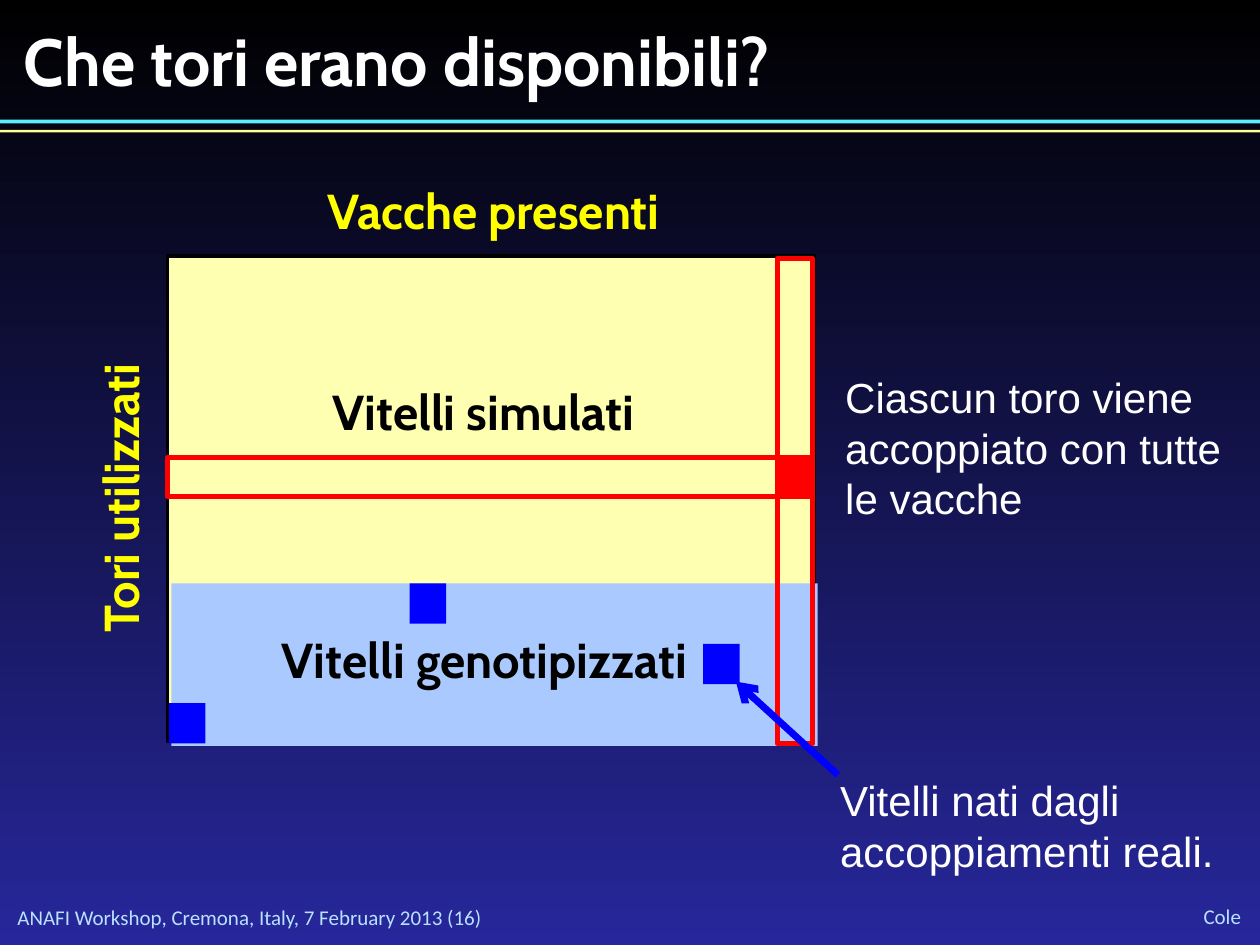
from typing import NamedTuple, Optional

from lxml.etree import SubElement
from pptx import Presentation
from pptx.dml.color import RGBColor
from pptx.enum.shapes import MSO_CONNECTOR as Connector, MSO_SHAPE as Preset
from pptx.enum.text import MSO_ANCHOR as Anchor, PP_ALIGN as Align
from pptx.oxml.ns import qn
from pptx.slide import Slide
from pptx.util import Pt

BLACK = RGBColor(0x00, 0x00, 0x00)
WHITE = RGBColor(0xFF, 0xFF, 0xFF)
NAVY = RGBColor(0x27, 0x27, 0x9B)
CYAN = RGBColor(0x5B, 0xEF, 0xFF)
CREAM = RGBColor(0xFF, 0xFF, 0x99)
SIMULATED = RGBColor(0xFF, 0xFF, 0xB2)
GENOTYPED = RGBColor(0xA9, 0xC9, 0xFF)
FOOTER = RGBColor(0xB8, 0xE2, 0xFF)
YELLOW = RGBColor(0xFF, 0xFF, 0x00)
RED = RGBColor(0xFF, 0x00, 0x00)
BLUE = RGBColor(0x00, 0x00, 0xFF)

HERD_W, HERD_H = 369.4, 277.2
LABEL_W, LABEL_H = 277.2, 41
MATING_W, MATING_H = 20.9, 23


class Block(NamedTuple):
    left: float
    top: float
    width: float
    height: float
    fill: Optional[RGBColor] = None
    line: Optional[RGBColor] = None
    weight: float = 0


class Style(NamedTuple):
    font: str
    size: float
    color: RGBColor
    bold: bool = False
    align: Align = Align.LEFT
    anchor: Anchor = Anchor.TOP
    padded: bool = True


class Label(NamedTuple):
    text: str
    left: float
    top: float
    width: float
    height: float
    style: Style
    rotation: float = 0


TITLE = Style("Cabin", 38, WHITE, bold=True, padded=False)
AXIS = Style("Cabin", 28, YELLOW, bold=True, align=Align.CENTER)
GROUP = AXIS._replace(color=BLACK)
NOTE = Style("Arial", 24, WHITE)
EVENT = Style("Calibri", 12, FOOTER, anchor=Anchor.MIDDLE, padded=False)
AUTHOR = EVENT._replace(align=Align.RIGHT)

BLOCKS = [
    Block(0, 68.4, 720, 2.2, CYAN),
    Block(0, 74.2, 720, 1.4, CREAM),
    Block(95.8, 146.2, HERD_W, HERD_H, SIMULATED, BLACK, 2),
    Block(97.9, 333.4, HERD_W, 92.9, GENOTYPED),
    Block(444.2, 147.6, 20.2, HERD_H, line=RED, weight=3),
    Block(95.8, 261.4, 367.9, 22.3, line=RED, weight=3),
    Block(444.2, 261.4, MATING_W, MATING_H, RED),
] + [
    Block(left, top, MATING_W, MATING_H, BLUE)
    for left, top in ((96.5, 401.8), (234, 333.4), (401.8, 367.9))
]

LABELS = [
    Label("Che tori erano disponibili?", 13.7, 11.5, 648, 46, TITLE),
    Label("Tori utilizzati", -69.8, 264.2, LABEL_W, LABEL_H, AXIS, 270),
    Label("Vacche presenti", 143.3, 99.4, LABEL_W, LABEL_H, AXIS),
    Label("Vitelli simulati", 137.5, 214.6, LABEL_W, LABEL_H, GROUP),
    Label("Vitelli genotipizzati", 138.2, 356.4, LABEL_W, LABEL_H, GROUP),
    Label("Ciascun toro viene accoppiato con tutte le vacche",
          475.9, 208.8, 230.4, 94.3, NOTE),
    Label("Vitelli nati dagli accoppiamenti reali.",
          473, 439.2, 230.4, 65.5, NOTE),
    Label("ANAFI Workshop, Cremona, Italy, 7 February 2013 (16)",
          10, 517, 376, 14.4, EVENT),
    Label("Cole", 627.8, 516.2, 81.4, 15.1, AUTHOR),
]


def paint_background(slide: Slide) -> None:
    fill = slide.background.fill
    fill.gradient()
    fill.gradient_angle = 270
    for stop, color, position in zip(fill.gradient_stops, (BLACK, NAVY), (0, 1)):
        stop.color.rgb = color
        stop.position = position


def draw_block(slide: Slide, block: Block) -> None:
    shape = slide.shapes.add_shape(Preset.RECTANGLE, *map(Pt, block[:4]))
    shape.shadow.inherit = False
    if block.fill is None:
        shape.fill.background()
    else:
        shape.fill.solid()
        shape.fill.fore_color.rgb = block.fill
    if block.line is None:
        shape.line.fill.background()
    else:
        shape.line.color.rgb = block.line
        shape.line.width = Pt(block.weight)


def draw_label(slide: Slide, label: Label) -> None:
    style = label.style
    box = slide.shapes.add_textbox(*map(Pt, label[1:5]))
    box.rotation = label.rotation
    frame = box.text_frame
    frame.text = label.text
    frame.word_wrap = True
    frame.vertical_anchor = style.anchor
    if not style.padded:
        frame.margin_left = frame.margin_right = 0
        frame.margin_top = frame.margin_bottom = 0
    paragraph = frame.paragraphs[0]
    paragraph.alignment = style.align
    font = paragraph.runs[0].font
    font.name, font.size, font.bold = style.font, Pt(style.size), style.bold
    font.color.rgb = style.color


def draw_arrow(slide: Slide, start: tuple[float, float],
               end: tuple[float, float], color: RGBColor, weight: float) -> None:
    arrow = slide.shapes.add_connector(
        Connector.STRAIGHT, *map(Pt, start + end))
    arrow.line.color.rgb = color
    arrow.line.width = Pt(weight)
    SubElement(arrow.line._get_or_add_ln(), qn("a:tailEnd"), type="arrow")
    SubElement(arrow._element.spPr, qn("a:effectLst"))


def main() -> None:
    deck = Presentation()
    deck.slide_width, deck.slide_height = Pt(720), Pt(540)
    slide = deck.slides.add_slide(deck.slide_layouts[6])
    paint_background(slide)
    for block in BLOCKS:
        draw_block(slide, block)
    for label in LABELS:
        draw_label(slide, label)
    draw_arrow(slide, (478.8, 442.8), (420.5, 389.5), BLUE, 4)
    deck.save("out.pptx")


if __name__ == "__main__":
    main()
